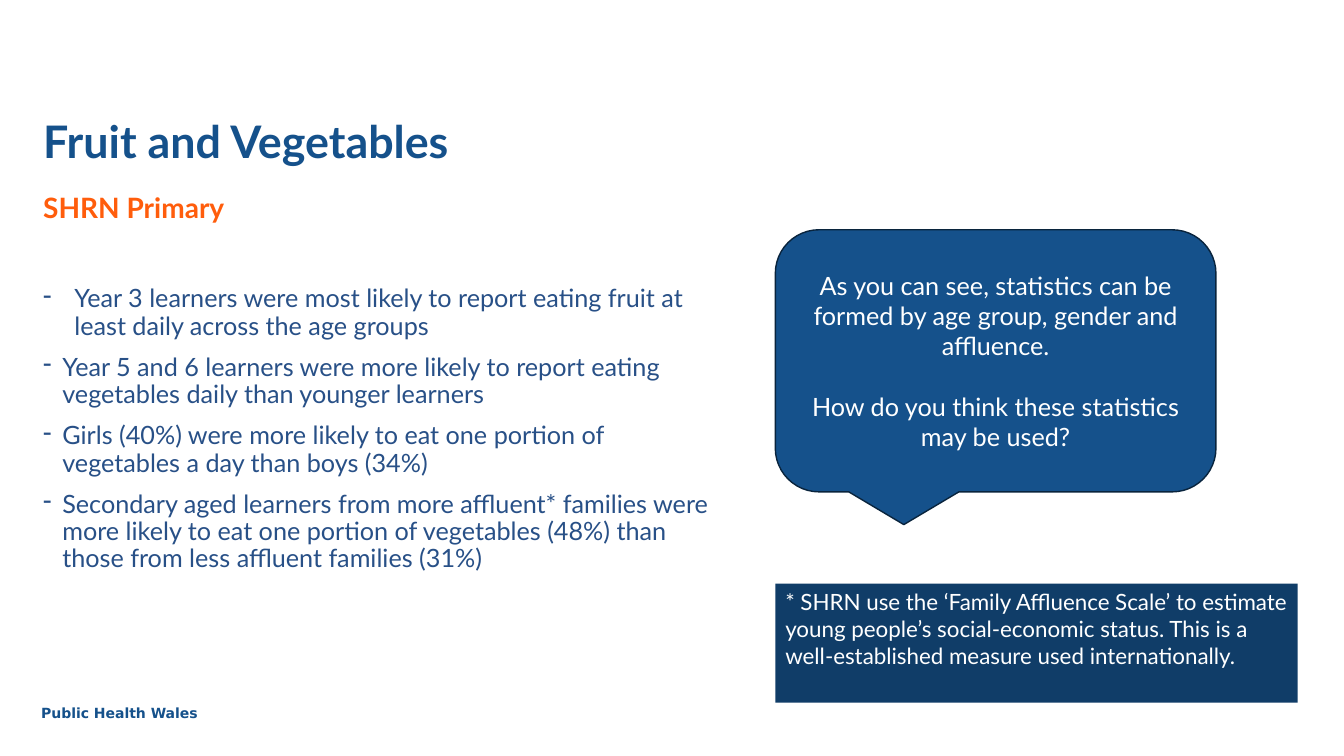
from dataclasses import dataclass

from lxml import etree
from pptx import Presentation
from pptx.dml.color import RGBColor
from pptx.enum.shapes import MSO_SHAPE
from pptx.enum.text import MSO_ANCHOR, PP_ALIGN
from pptx.oxml.ns import qn
from pptx.util import Inches, Pt

RECT = MSO_SHAPE.RECTANGLE
CALLOUT = MSO_SHAPE.ROUNDED_RECTANGULAR_CALLOUT
TOP, MIDDLE, BOTTOM = MSO_ANCHOR.TOP, MSO_ANCHOR.MIDDLE, MSO_ANCHOR.BOTTOM
LEFT, CENTER = PP_ALIGN.LEFT, PP_ALIGN.CENTER

COLORS = {
    "blue": "15518B",
    "navy": "103D68",
    "edge": "09243D",
    "orange": "FF5D0C",
    "body": "285087",
    "white": "FFFFFF",
}


@dataclass
class Block:
    box: tuple[float, float, float, float]
    lines: list[str]
    size: int
    color: str
    font: str = "Lato"
    bold: bool = False
    anchor: MSO_ANCHOR = TOP
    align: PP_ALIGN = LEFT
    leading: float = 1.0
    gap: float = 0
    dents: tuple[float, ...] = ()
    form: MSO_SHAPE | None = None
    fill: str = ""
    edge: str = ""


BLOCKS = [
    # Footer
    Block((0.31, 6.94, 1.81, 0.27), ["Public Health Wales"], 10, "blue",
          font="DejaVu Sans", bold=True),
    # Headings
    Block((0.33, 0.99, 4.85, 0.73), ["Fruit and Vegetables"], 32, "blue",
          bold=True, anchor=BOTTOM, leading=0.9),
    Block((0.33, 1.88, 4.85, 0.4), ["SHRN Primary"], 20, "orange",
          bold=True, leading=0.9),
    # Findings
    Block((0.33, 2.79, 6.83, 4.05), [
        "Year 3 learners were most likely to report eating fruit at least "
        "daily across the age groups",
        "Year 5 and 6 learners were more likely to report eating vegetables "
        "daily than younger learners",
        "Girls (40%) were more likely to eat one portion of vegetables a day "
        "than boys (34%)",
        "Secondary aged learners from more affluent* families were more "
        "likely to eat one portion of vegetables (48%) than those from less "
        "affluent families (31%)",
    ], 18, "body", leading=0.9, gap=10, dents=(0.31, 0.19, 0.19, 0.19)),
    # Footnote
    Block((7.69, 5.79, 5.18, 1.18), [
        "* SHRN use the ‘Family Affluence Scale’ to estimate young people’s "
        "social-economic status. This is a well-established measure used "
        "internationally.",
    ], 16, "white", form=RECT, fill="navy"),
    # Callout
    Block((7.69, 2.28, 4.37, 2.6), [
        "As you can see, statistics can be formed by age group, gender and "
        "affluence.",
        "How do you think these statistics may be used?",
    ], 18, "white", anchor=MIDDLE, align=CENTER, gap=21.6,
          form=CALLOUT, fill="blue", edge="edge"),
]


def shade(name: str) -> RGBColor:
    return RGBColor.from_string(COLORS[name])


def add_dash(para, dent: float) -> None:
    props = para._p.get_or_add_pPr()
    props.set("marL", str(Inches(dent)))
    props.set("indent", str(-Inches(dent)))
    etree.SubElement(props, qn("a:buChar")).set("char", "-")


def add_block(slide, block: Block) -> None:
    box = [Inches(n) for n in block.box]
    if block.form is None:
        shape = slide.shapes.add_textbox(*box)
    else:
        shape = slide.shapes.add_shape(block.form, *box)
        shape.shadow.inherit = False
        shape.fill.solid()
        shape.fill.fore_color.rgb = shade(block.fill)
        if block.edge:
            shape.line.color.rgb = shade(block.edge)
            shape.line.width = Pt(1)
        else:
            shape.line.fill.background()

    frame = shape.text_frame
    frame.word_wrap = True
    frame.vertical_anchor = block.anchor
    frame.text = "\n".join(block.lines)
    for i, para in enumerate(frame.paragraphs):
        para.alignment = block.align
        para.line_spacing = block.leading
        if i:
            para.space_before = Pt(block.gap)
        if block.dents:
            add_dash(para, block.dents[i])
        for run in para.runs:
            run.font.name = block.font
            run.font.size = Pt(block.size)
            run.font.bold = block.bold
            run.font.color.rgb = shade(block.color)


def main() -> None:
    deck = Presentation()
    deck.slide_width, deck.slide_height = Inches(13.33), Inches(7.5)
    slide = deck.slides.add_slide(deck.slide_layouts[6])
    for block in BLOCKS:
        add_block(slide, block)
    deck.save("out.pptx")


if __name__ == "__main__":
    main()
